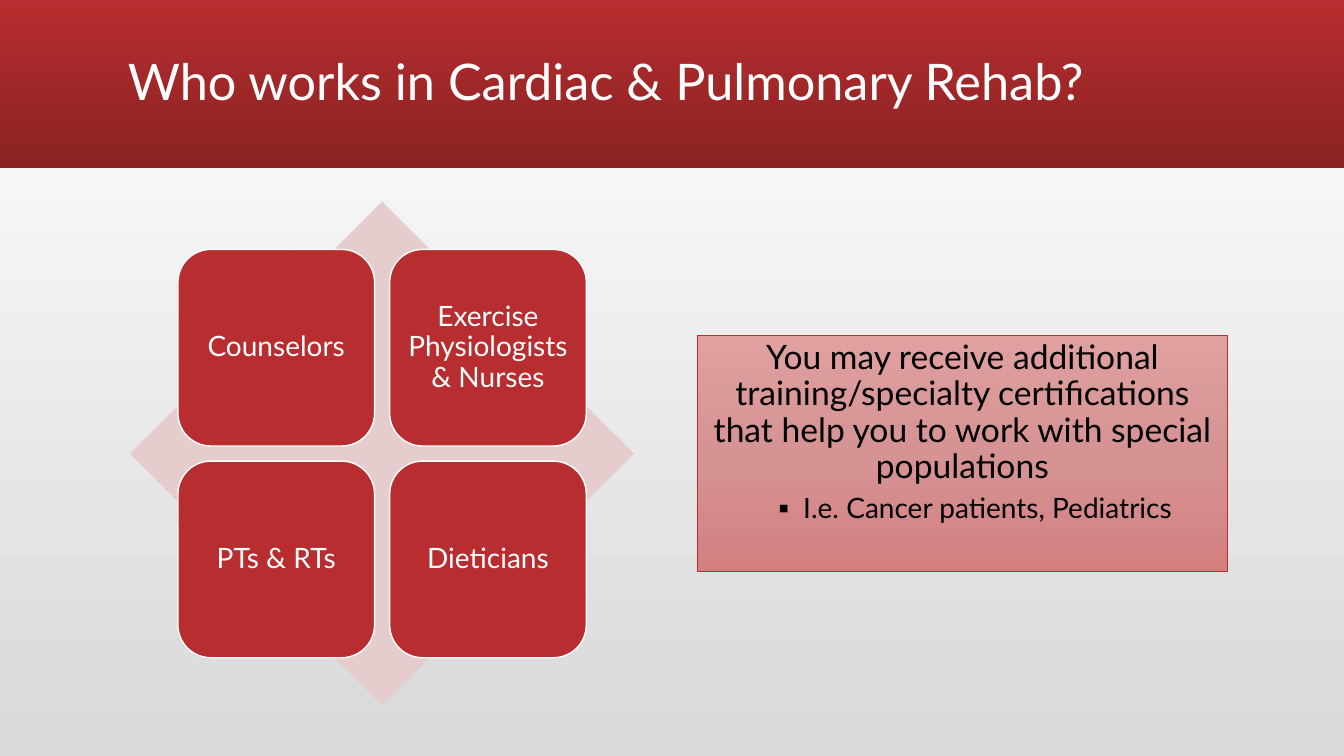
import copy

import pptx
import pptx.dml.color
import pptx.enum.shapes
import pptx.enum.text
import pptx.oxml
import pptx.oxml.ns
import pptx.util

Inches = pptx.util.Inches
Pt = pptx.util.Pt
Shape = pptx.enum.shapes.MSO_SHAPE
Align = pptx.enum.text.PP_ALIGN
Anchor = pptx.enum.text.MSO_ANCHOR

FONT = "Lato"
COLORS = {
    "red": "B82D2F", "dark": "8A2223", "pale": "E6CDCD",
    "white": "FFFFFF", "grey": "D9D9D9", "black": "000000",
    "top": "E0A0A0", "mid": "D69394", "low": "D47F80",
}
STAFF = ["Counselors", "Exercise Physiologists & Nurses", "PTs & RTs", "Dieticians"]


def color(name):
    """Return the named colour."""
    return pptx.dml.color.RGBColor.from_string(COLORS[name])


def shade(fill, *names):
    """Fill from top to bottom through evenly spaced colours."""
    fill.gradient()
    fill.gradient_angle = 270
    first = fill.gradient_stops[0]._gs
    for _ in names[2:]:
        first.addnext(copy.deepcopy(first))
    for i, (stop, name) in enumerate(zip(fill.gradient_stops, names)):
        stop.position = i / (len(names) - 1)
        stop.color.rgb = color(name)


def block(slide, kind, box, fill, line=None, width=1):
    """Add a flat preset shape with one fill colour or a gradient."""
    shape = slide.shapes.add_shape(kind, *map(Inches, box))
    shape.shadow.inherit = False
    if len(fill) > 1:
        shade(shape.fill, *fill)
    else:
        shape.fill.solid()
        shape.fill.fore_color.rgb = color(fill[0])
    if line:
        shape.line.color.rgb = color(line)
        shape.line.width = Pt(width)
    else:
        shape.line.fill.background()
    return shape


def style(para, size, name, align):
    """Format a paragraph and its runs."""
    para.alignment = align
    para.line_spacing = 0.9
    for run in para.runs:
        run.font.name = FONT
        run.font.size = Pt(size)
        run.font.color.rgb = color(name)


def header(slide, box):
    """Draw the title band with the title in it."""
    x, y, w, h = box
    block(slide, Shape.RECTANGLE, box, ["red", "dark"])
    title = slide.shapes.add_textbox(
        Inches(x + 1.17), Inches(y + 0.11), Inches(11), Inches(1.45))
    frame = title.text_frame
    frame.word_wrap = True
    frame.vertical_anchor = Anchor.MIDDLE
    frame.text = "Who works in Cardiac & Pulmonary Rehab?"
    style(frame.paragraphs[0], 36, "white", Align.LEFT)


def matrix(slide, box):
    """Draw the staff tiles in two rows over a diamond."""
    x, y, w, h = box
    block(slide, Shape.DIAMOND, box, ["pale"])
    side, step = 0.39 * w, 0.42 * w
    edge = (w - side - step) / 2
    for i, name in enumerate(STAFF):
        row, col = divmod(i, 2)
        spot = (x + edge + col * step, y + edge + row * step, side, side)
        tile = block(slide, Shape.ROUNDED_RECTANGLE, spot, ["red"], "white")
        frame = tile.text_frame
        frame.word_wrap = True
        frame.vertical_anchor = Anchor.MIDDLE
        frame.margin_left = frame.margin_right = Inches(0.08)
        frame.margin_top = frame.margin_bottom = Inches(0.08)
        frame.text = name
        style(frame.paragraphs[0], 20, "white", Align.CENTER)


def note(slide, box):
    """Draw the shaded panel on extra training."""
    panel = block(slide, Shape.RECTANGLE, box, ["top", "mid", "low"], "red", 0.5)
    frame = panel.text_frame
    frame.word_wrap = True
    frame.vertical_anchor = Anchor.TOP
    frame.text = ("You may receive additional training/specialty certifications "
                  "that help you to work with special populations")
    style(frame.paragraphs[0], 24, "black", Align.CENTER)
    item = frame.add_paragraph()
    item.text = "I.e. Cancer patients, Pediatrics"
    item.level = 1
    item.space_before = Pt(6)
    style(item, 20, "black", Align.CENTER)
    props = item._p.get_or_add_pPr()
    props.set("marL", str(Inches(0.5)))
    props.set("indent", str(Inches(-0.25)))
    space = pptx.oxml.ns.nsdecls("a")
    props.append(pptx.oxml.parse_xml(f'<a:buFont {space} typeface="{FONT}"/>'))
    props.append(pptx.oxml.parse_xml(f'<a:buChar {space} char="▪"/>'))


def main():
    """Build and save the slide."""
    deck = pptx.Presentation()
    deck.slide_width = Inches(13.33)
    deck.slide_height = Inches(7.5)
    slide = deck.slides.add_slide(deck.slide_layouts[6])
    shade(slide.background.fill, "white", "grey")
    header(slide, (0, 0, 13.33, 1.67))
    matrix(slide, (1.29, 2, 5, 5))
    note(slide, (6.92, 3.33, 5.25, 2.34))
    deck.save("out.pptx")


if __name__ == "__main__":
    main()
